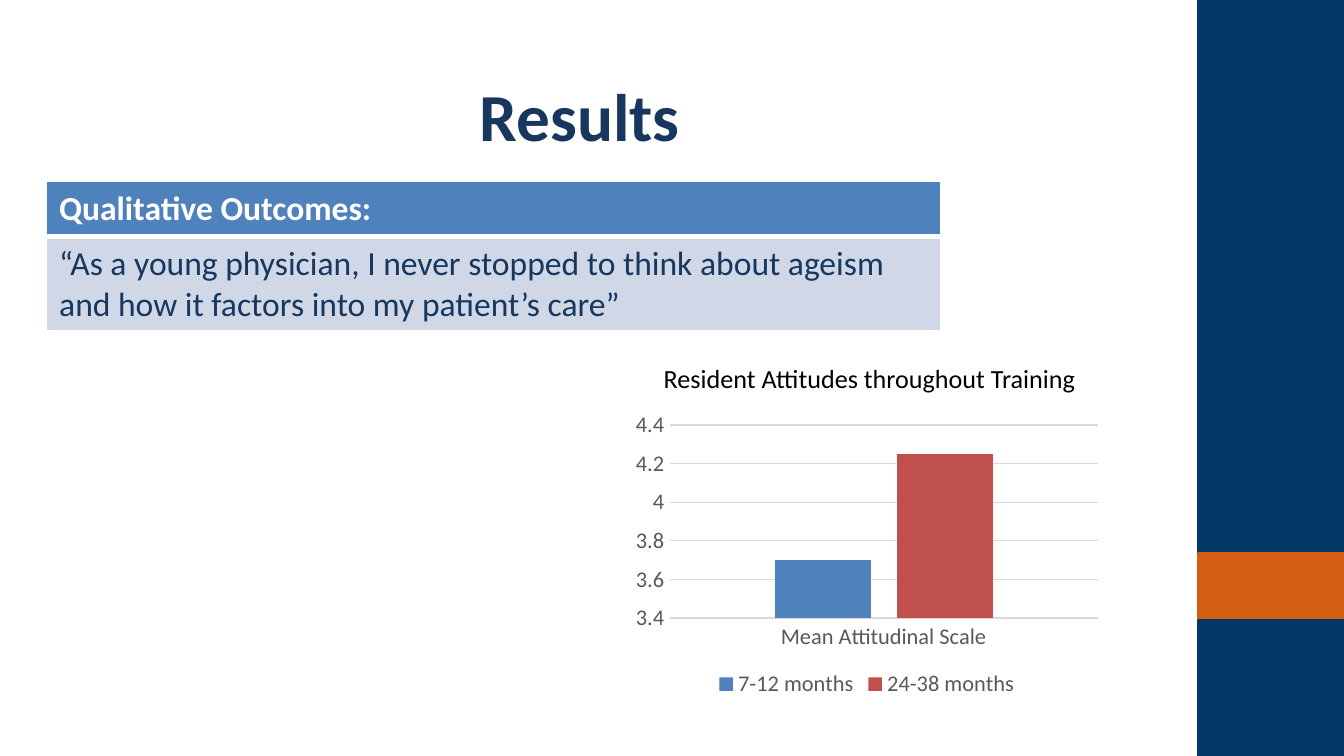
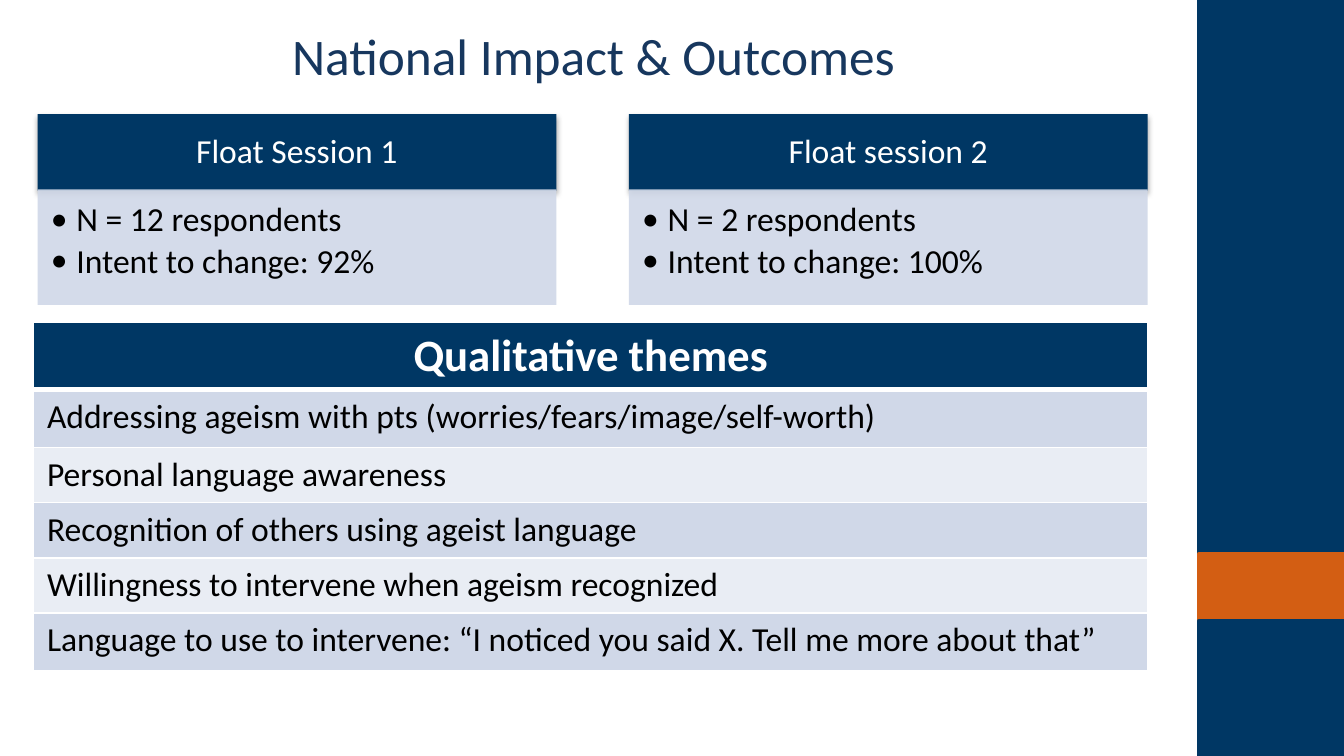
from lxml import etree
from pptx import Presentation
from pptx import util as u
from pptx.chart.data import CategoryChartData
from pptx.dml.color import RGBColor
from pptx.enum import chart as ch
from pptx.enum import shapes, text
from pptx.oxml import parse_xml
from pptx.oxml.ns import qn

FONT = "Calibri"
NAVY, ORANGE, TITLE = "003764", "D35E13", "17375E"
BLUE, RED, PALE, PALER = "4F81BD", "C0504D", "D0D8E8", "E9EDF4"
WHITE, BLACK, GREY, RULE = "FFFFFF", "000000", "595959", "D9D9D9"
NS = 'xmlns:a="http://schemas.openxmlformats.org/drawingml/2006/main"'
rgb = RGBColor.from_string


def style(font, size, color, bold=False):
    font.name, font.size, font.bold = FONT, u.Pt(size), bold
    font.color.rgb = rgb(color)


def add_banded_table(slide, box, heights, rows, header_fill, header_size, body_color):
    """One-column table: a bold header above banded rows, ruled in white."""
    table = slide.shapes.add_table(len(rows), 1, *map(u.Inches, box)).table
    for i, (height, wording) in enumerate(zip(heights, rows)):
        table.rows[i].height = u.Inches(height)
        cell = table.cell(i, 0)
        cell.text_frame.text = wording
        run = cell.text_frame.paragraphs[0].runs[0]
        if i == 0:
            style(run.font, header_size, WHITE, True)
        else:
            style(run.font, 18, body_color)
        # Borders come before the fill in the cell properties
        props = cell._tc.get_or_add_tcPr()
        for side in "LRTB":
            under_header = (i, side) in ((0, "B"), (1, "T"))
            props.append(parse_xml(
                f'<a:ln{side} {NS} w="{u.Pt(3 if under_header else 1)}"><a:solidFill>'
                f'<a:srgbClr val="{WHITE}"/></a:solidFill></a:ln{side}>'))
        cell.fill.solid()
        cell.fill.fore_color.rgb = rgb(header_fill if i == 0 else (PALER, PALE)[i % 2])
    return table


prs = Presentation()
prs.slide_width = u.Inches(10)
prs.slide_height = prs.slide_width * 9 // 16
titles = [
    ("Results ", (-0.42, 0.38, 9.58, 0.94), 36, True),
    ("National Impact & Outcomes", (0.54, 0.16, 7.75, 0.5), 27.5, False),
]
sidebar = [(0, 4.19, NAVY), (4.12, 0.5, ORANGE), (4.62, 1.06, NAVY)]

# Sidebar and title on every slide
for wording, box, size, bold in titles:
    slide = prs.slides.add_slide(prs.slide_layouts[6])
    for top, height, color in sidebar:
        band = slide.shapes.add_shape(
            shapes.MSO_SHAPE.RECTANGLE, *map(u.Inches, (8.92, top, 1.08, height)))
        band.shadow.inherit = False
        band.fill.solid()
        band.fill.fore_color.rgb = band.line.color.rgb = rgb(color)
        band.line.width = u.Pt(2)
    frame = slide.shapes.add_textbox(*map(u.Inches, box)).text_frame
    frame.word_wrap = True
    frame.vertical_anchor = text.MSO_ANCHOR.MIDDLE
    frame.text = wording
    frame.paragraphs[0].alignment = text.PP_ALIGN.CENTER
    style(frame.paragraphs[0].runs[0].font, size, TITLE, bold)

results, impact = prs.slides

# Results: quotation and attitude chart
add_banded_table(
    results, (0.34, 1.35, 6.66, 1.11), (0.41, 0.7),
    ["Qualitative Outcomes:",
     "“As a young physician, I never stopped to think about ageism "
     "and how it factors into my patient’s care”"],
    BLUE, 18, TITLE)

attitudes = CategoryChartData()
attitudes.categories = ["Mean Attitudinal Scale"]
attitudes.add_series("7-12 months", [3.7])
attitudes.add_series("24-38 months", [4.25])
chart = results.shapes.add_chart(
    ch.XL_CHART_TYPE.COLUMN_CLUSTERED,
    *map(u.Inches, (4.66, 3.02, 3.58, 2.21)), attitudes).chart
style(chart.font, 10, BLACK)
chart.has_title = False
chart.has_legend = True
chart.legend.position = ch.XL_LEGEND_POSITION.BOTTOM
chart.legend.include_in_layout = False
style(chart.legend.font, 12, GREY)

plot = chart.plots[0]
plot.gap_width, plot.overlap, plot.vary_by_categories = 219, -27, False
for series, color in zip(plot.series, (BLUE, RED)):
    series.format.fill.solid()
    series.format.fill.fore_color.rgb = rgb(color)

scale = chart.value_axis
scale.minimum_scale, scale.maximum_scale, scale.major_unit = 3.4, 4.4, 0.2
scale.format.line.fill.background()
for axis in (chart.category_axis, scale):
    axis.major_tick_mark = axis.minor_tick_mark = ch.XL_TICK_MARK.NONE
    style(axis.tick_labels.font, 12, GREY)
for rule in (chart.category_axis.format.line, scale.major_gridlines.format.line):
    rule.color.rgb, rule.width = rgb(RULE), u.Pt(0.75)

caption = results.shapes.add_textbox(*map(u.Inches, (4.84, 2.65, 3.38, 0.34))).text_frame
caption.word_wrap = True
caption.text = "Resident Attitudes throughout Training"
style(caption.paragraphs[0].runs[0].font, 14, BLACK)

# Impact: one card per session
sessions = [
    ("Float Session 1", ["N = 12 respondents", "Intent to change: 92%"]),
    ("Float session 2", ["N = 2 respondents", "Intent to change: 100%"]),
]
for i, (session, findings) in enumerate(sessions):
    left = 0.28 + 4.4 * i
    parts = [
        (0.85, 0.57, NAVY, WHITE, [session], (0.14, 0.08, 0.14, 0.08)),
        (1.41, 0.86, PALE, BLACK, findings, (0.1, 0.1, 0.14, 0.16)),
    ]
    for top, height, fill, color, lines, insets in parts:
        card = impact.shapes.add_shape(
            shapes.MSO_SHAPE.RECTANGLE, *map(u.Inches, (left, top, 3.86, height)))
        card.shadow.inherit = False
        card.fill.solid()
        card.fill.fore_color.rgb = rgb(fill)
        card.line.fill.background()
        is_header = fill == NAVY
        if is_header:
            effects = card._element.spPr.find(qn("a:effectLst"))
            effects.append(parse_xml(
                f'<a:outerShdw {NS} blurRad="{u.Pt(3.1)}" dist="{u.Pt(1.8)}" dir="5400000" '
                f'rotWithShape="0"><a:srgbClr val="{BLACK}"><a:alpha val="35000"/>'
                '</a:srgbClr></a:outerShdw>'))
        else:
            tint = card._element.spPr.find(qn("a:solidFill"))[0]
            etree.SubElement(tint, qn("a:alpha"), val="90000")
        frame = card.text_frame
        frame.word_wrap = True
        frame.margin_left, frame.margin_top, frame.margin_right, frame.margin_bottom = map(
            u.Inches, insets)
        frame.vertical_anchor = text.MSO_ANCHOR.MIDDLE if is_header else text.MSO_ANCHOR.TOP
        frame.text = "\n".join(lines)
        for para in frame.paragraphs:
            para.alignment = text.PP_ALIGN.CENTER if is_header else text.PP_ALIGN.LEFT
            para.line_spacing = 0.9
            if not is_header:
                para.space_after = u.Pt(2.7)
                props = para._p.get_or_add_pPr()
                props.set("marL", str(u.Inches(0.19)))
                props.set("indent", str(u.Inches(-0.19)))
                etree.SubElement(props, qn("a:buFont"), typeface=FONT)
                etree.SubElement(props, qn("a:buChar"), char="•")
            style(para.runs[0].font, 18, color)

# Impact: themes
themes = add_banded_table(
    impact, (0.25, 2.4, 8.29, 2.56), (0.49, 0.43, 0.41, 0.41, 0.41, 0.43),
    ["Qualitative themes",
     "Addressing ageism with pts (worries/fears/image/self-worth)",
     "Personal language awareness",
     "Recognition of others using ageist language",
     "Willingness to intervene when ageism recognized",
     "Language to use to intervene: “I noticed you said X. Tell me more about that”"],
    NAVY, 24, BLACK)
themes.cell(0, 0).text_frame.paragraphs[0].alignment = text.PP_ALIGN.CENTER

prs.save("out.pptx")
